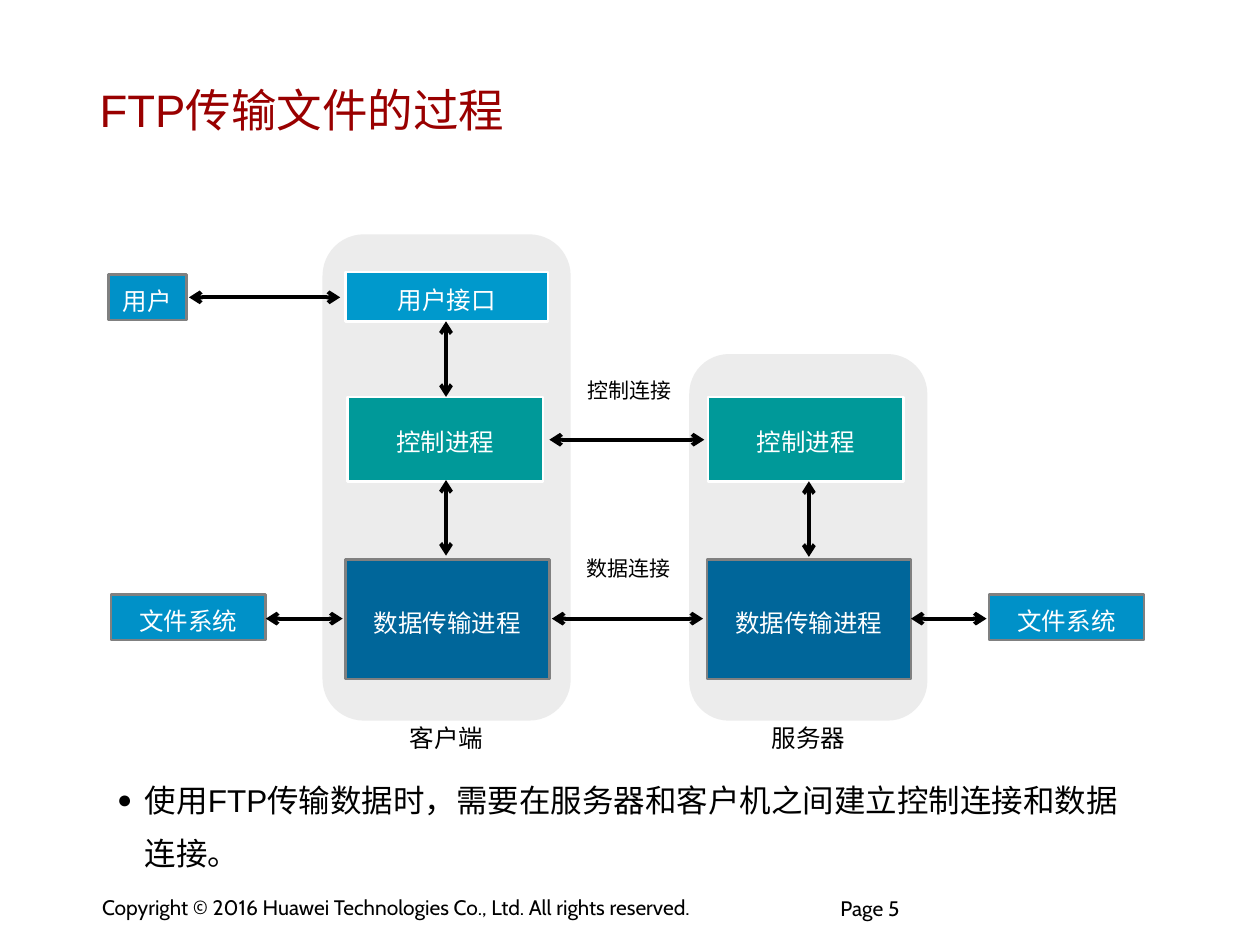
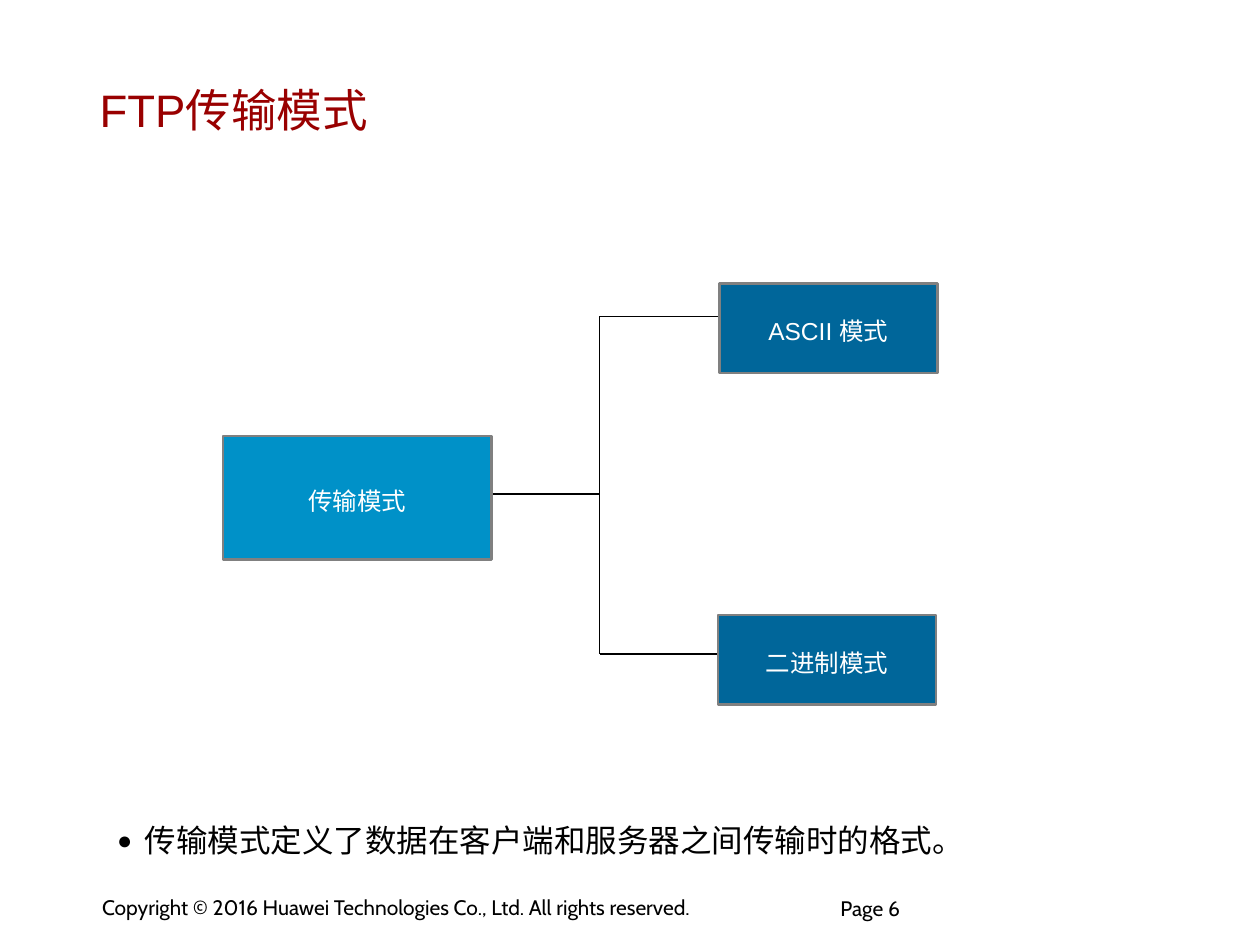
import pptx
import pptx.util
import pptx.dml.color
import pptx.enum.shapes
import pptx.enum.text
import pptx.oxml
import pptx.oxml.ns

Pt = pptx.util.Pt
SHAPE = pptx.enum.shapes.MSO_SHAPE
ALIGN = pptx.enum.text.PP_ALIGN
ANCHOR = pptx.enum.text.MSO_ANCHOR

COLORS = {
    "title": "990000", "ink": "000000", "white": "FFFFFF", "edge": "808080",
    "outer": "0091C8", "interface": "0099CC", "control": "009999",
    "data": "00669A", "group": "D9D9D9",
}
FIRST_PAGE = 5
COLS, ROWS = 100, 75
TIGHT = (0.9, 0.4)


def rgb(name):
    return pptx.dml.color.RGBColor.from_string(COLORS[name])


def element(tag, **attrs):
    el = pptx.oxml.parse_xml(f"<a:{tag} {pptx.oxml.ns.nsdecls('a')}/>")
    for key, value in attrs.items():
        el.set(key, str(value))
    return el


class Deck:
    def __init__(self):
        self.prs = pptx.Presentation()
        self.prs.slide_width = pptx.util.Inches(10)
        self.prs.slide_height = pptx.util.Inches(7.5)
        self.s = None

    def x(self, cols):
        return round(self.prs.slide_width * cols / COLS)

    def y(self, rows):
        return round(self.prs.slide_height * rows / ROWS)

    def area(self, at):
        left, top, width, height = at
        return self.x(left), self.y(top), self.x(width), self.y(height)

    def place(self, sp, at):
        sp.left, sp.top, sp.width, sp.height = self.area(at)

    def fill_text(self, sp, text, size, color="ink", font="Arial", align=ALIGN.LEFT,
                  anchor=ANCHOR.TOP, spacing=1.0, wrap=True, inset=(1, 0.5),
                  bullet=False):
        tf = sp.text_frame
        tf.auto_size = pptx.enum.text.MSO_AUTO_SIZE.NONE
        tf.word_wrap = wrap
        tf.vertical_anchor = anchor
        tf.margin_left = tf.margin_right = self.x(inset[0])
        tf.margin_top = tf.margin_bottom = self.y(inset[1])
        p = tf.paragraphs[0]
        p.alignment = align
        p.line_spacing = spacing
        p.space_before = Pt(0)
        if bullet:
            pPr = p._p.get_or_add_pPr()
            pPr.set("marL", str(self.x(2.2)))
            pPr.set("indent", str(-self.x(2.2)))
            pPr.append(element("buSzPct", val=80000))
            pPr.append(element("buChar", char="●"))
        r = p.add_run()
        r.text = text
        r.font.name = font
        r.font.size = Pt(size)
        r.font.color.rgb = rgb(color)

    def slide(self, title, note, note_at):
        self.s = self.prs.slides.add_slide(self.prs.slide_layouts[1])
        head, body = self.s.placeholders
        self.place(head, (7, 3.9, 84.5, 9.5))
        self.fill_text(head, title, 26, "title", anchor=ANCHOR.MIDDLE, inset=TIGHT)
        self.place(body, note_at)
        self.fill_text(body, note, 18, spacing=1.4, bullet=True)
        self.text("Copyright © 2016 Huawei Technologies Co., Ltd. All rights reserved.",
                  (7.2, 70.6, 54.9, 2.9), 12, font="Cabin", wrap=False, inset=TIGHT)
        page = FIRST_PAGE + len(self.prs.slides) - 1
        self.text(f"Page {page}", (66.7, 71.4, 16.6, 3.6), 12, font="Cabin",
                  spacing=0.85, inset=(0, 0))

    def text(self, text, at, size, **style):
        sp = self.s.shapes.add_textbox(*self.area(at))
        self.fill_text(sp, text, size, **style)

    def label(self, text, at, size):
        self.text(text, at, size, align=ALIGN.CENTER, wrap=False)

    def shape(self, kind, at, fill):
        sp = self.s.shapes.add_shape(kind, *self.area(at))
        sp.shadow.inherit = False
        sp.fill.solid()
        sp.fill.fore_color.rgb = rgb(fill)
        return sp

    def group(self, at):
        sp = self.shape(SHAPE.ROUNDED_RECTANGLE, at, "group")
        sp.line.fill.background()
        color = sp._element.spPr.find(".//" + pptx.oxml.ns.qn("a:srgbClr"))
        color.append(element("alpha", val=49000))

    def box(self, text, at, fill, edge="edge"):
        sp = self.shape(SHAPE.RECTANGLE, at, fill)
        sp.line.color.rgb = rgb(edge)
        sp.line.width = Pt(1.5)
        self.fill_text(sp, text, 14, "white", align=ALIGN.CENTER,
                       anchor=ANCHOR.MIDDLE, spacing=1.2, wrap=False)

    def line(self, x1, y1, x2, y2, width=0.75, arrows=False):
        c = self.s.shapes.add_connector(
            pptx.enum.shapes.MSO_CONNECTOR.STRAIGHT,
            self.x(x1), self.y(y1), self.x(x2), self.y(y2))
        c.line.color.rgb = rgb("ink")
        c.line.width = Pt(width)
        spPr = c._element.spPr
        if arrows:
            ln = spPr.find(pptx.oxml.ns.qn("a:ln"))
            for end in ("headEnd", "tailEnd"):
                ln.append(element(end, type="arrow"))
        spPr.append(element("effectLst"))

    def arrow(self, x1, y1, x2, y2):
        self.line(x1, y1, x2, y2, 2.25, True)


def transfer_process(deck):
    deck.slide("FTP传输文件的过程",
               "使用FTP传输数据时，需要在服务器和客户机之间建立控制连接和数据连接。",
               (8.3, 60.3, 83.4, 8.7))
    deck.group((54.7, 28.1, 18.9, 29.1))
    deck.group((25.6, 18.6, 19.7, 38.6))

    deck.box("用户", (8.6, 21.8, 6.2, 3.6), "outer")
    deck.box("用户接口", (27.4, 21.6, 16.1, 3.9), "interface", "white")
    for left in (27.6, 56.2):
        deck.box("控制进程", (left, 31.5, 15.5, 6.7), "control", "white")
    for left in (27.4, 56.1):
        deck.box("数据传输进程", (left, 44.4, 16.2, 9.5), "data")
    for left in (8.8, 78.5):
        deck.box("文件系统", (left, 47.2, 12.3, 3.6), "outer")

    for text, left in (("客户端", 31.5), ("服务器", 60.2)):
        deck.label(text, (left, 56.9, 7.9, 3.4), 14)
    for text, left, top in (("控制连接", 45.6, 29.5), ("数据连接", 45.5, 43.6)):
        deck.label(text, (left, top, 8.8, 3), 12)

    user_row, control_row, data_row = 23.6, 34.9, 49.1
    for start, end, row in ((15, 27, user_row), (43.6, 55.9, control_row),
                            (21.1, 27.2, data_row), (43.8, 55.8, data_row),
                            (72.3, 78.3, data_row)):
        deck.arrow(start, row, end, row)
    client, server, drop = 35.4, 64.2, 6
    for col, top in ((client, 25.5), (client, 38.1), (server, 38.2)):
        deck.arrow(col, top, col, top + drop)


def transfer_modes(deck):
    deck.slide("FTP传输模式", "传输模式定义了数据在客户端和服务器之间传输时的格式。",
               (8.3, 63.5, 83.4, 5.5))
    trunk, upper, lower = 47.6, 25.1, 51.9
    deck.line(38.1, 39.2, trunk, 39.2)
    deck.line(trunk, upper, trunk, lower)
    for row in (upper, lower):
        deck.line(trunk, row, 57, row)
    deck.box("传输模式", (17.7, 34.6, 21.3, 9.8), "outer")
    for text, left, top in (("ASCII 模式", 57.1, 22.5), ("二进制模式", 57, 48.8)):
        deck.box(text, (left, top, 17.3, 7.1), "data")


def main():
    deck = Deck()
    transfer_process(deck)
    transfer_modes(deck)
    deck.prs.save("out.pptx")


if __name__ == "__main__":
    main()
